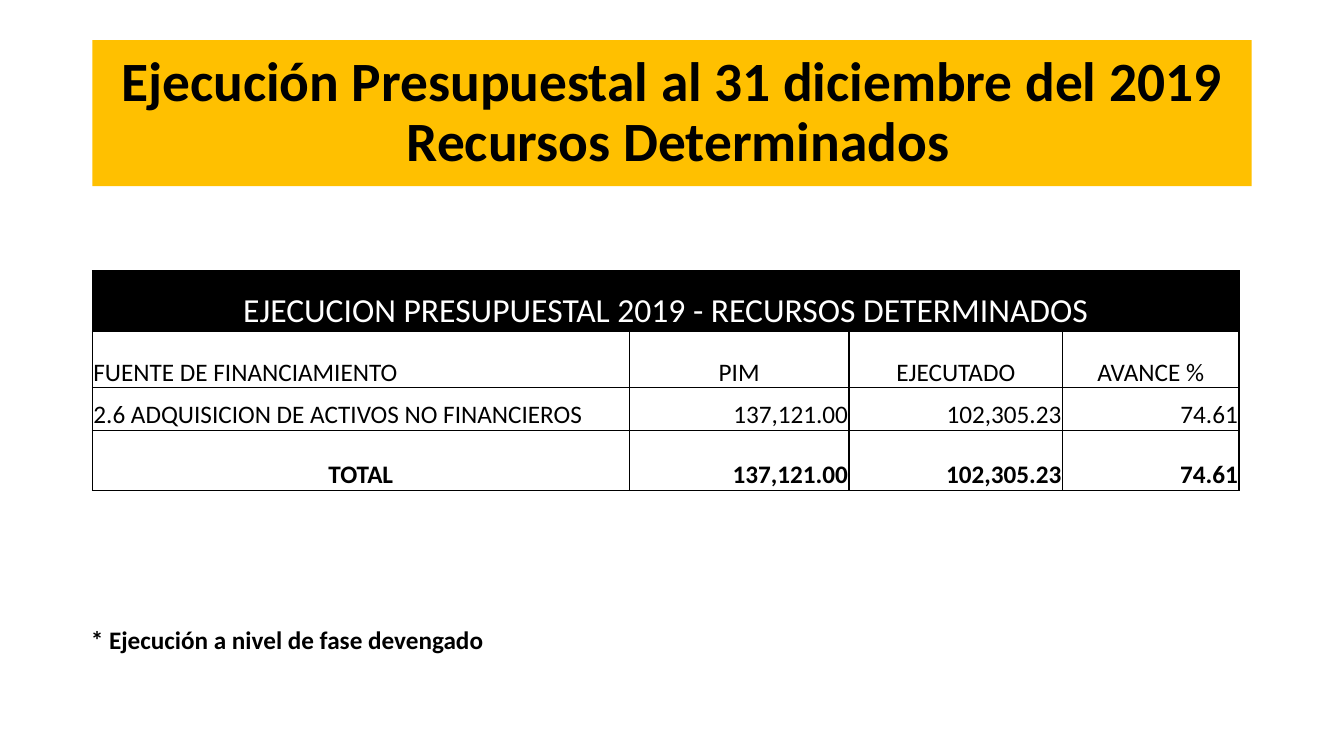
from dataclasses import dataclass

from lxml.etree import SubElement
from pptx import Presentation
from pptx.dml.color import RGBColor as RGB
from pptx.enum.text import MSO_ANCHOR as Anchor, MSO_AUTO_SIZE as AutoSize, PP_ALIGN as Align
from pptx.oxml.ns import qn
from pptx.util import Pt

COLORS = {"black": "000000", "white": "FFFFFF", "amber": "FFC000"}
FONT = "Calibri"
COL_WIDTHS = (383.5, 157, 152.5, 126)
L, C, R = Align.LEFT, Align.CENTER, Align.RIGHT


@dataclass
class Row:
    height: float
    texts: tuple[str, ...]
    aligns: tuple[Align, ...]
    size: float = 18
    bold: bool = False
    color: str = "black"
    fill: str | None = None


ROWS = (
    Row(43.5, ("EJECUCION PRESUPUESTAL 2019 - RECURSOS DETERMINADOS",), (C,),
        size=24, color="white", fill="black"),
    Row(40, ("FUENTE DE FINANCIAMIENTO", "PIM", "EJECUTADO", "AVANCE %"), (L, C, C, C)),
    Row(30.5, ("2.6 ADQUISICION DE ACTIVOS NO FINANCIEROS", "137,121.00", "102,305.23", "74.61"),
        (L, R, R, R)),
    Row(43, ("TOTAL", "137,121.00", "102,305.23", "74.61"), (C, R, R, R), bold=True),
)


def rgb(name: str) -> RGB:
    return RGB.from_string(COLORS[name])


def style(p, size: float, bold: bool, color: str = "black", align: Align = L) -> None:
    p.alignment = align
    p.font.name, p.font.size, p.font.bold = FONT, Pt(size), bold
    p.font.color.rgb = rgb(color)


def add_borders(cell) -> None:
    tc_pr = cell._tc.get_or_add_tcPr()
    for side in ("lnL", "lnR", "lnT", "lnB"):
        ln = SubElement(tc_pr, qn(f"a:{side}"), w=str(Pt(1)))
        fill = SubElement(ln, qn("a:solidFill"))
        SubElement(fill, qn("a:srgbClr"), val=COLORS["black"])


def format_cell(cell, row: Row) -> None:
    cell.margin_left = cell.margin_right = cell.margin_top = Pt(0.75)
    cell.margin_bottom = Pt(0)
    cell.vertical_anchor = Anchor.BOTTOM
    add_borders(cell)
    if row.fill:
        cell.fill.solid()
        cell.fill.fore_color.rgb = rgb(row.fill)
    else:
        cell.fill.background()


def add_budget_table(slide, left: float, top: float) -> None:
    table = slide.shapes.add_table(
        len(ROWS), len(COL_WIDTHS), Pt(left), Pt(top),
        Pt(sum(COL_WIDTHS)), Pt(sum(row.height for row in ROWS))).table
    table.first_row = table.horz_banding = False
    for col, width in zip(table.columns, COL_WIDTHS):
        col.width = Pt(width)
    table.cell(0, 0).merge(table.cell(0, len(COL_WIDTHS) - 1))
    for i, row in enumerate(ROWS):
        table.rows[i].height = Pt(row.height)
        for cell in table.rows[i].cells:
            format_cell(cell, row)
        for j, (text, align) in enumerate(zip(row.texts, row.aligns)):
            cell = table.cell(i, j)
            cell.text = text
            style(cell.text_frame.paragraphs[0], row.size, row.bold, row.color, align)


def add_title(slide) -> None:
    s = slide.shapes.title
    s.left, s.top, s.width, s.height = Pt(66), Pt(28.6), Pt(828), Pt(104.4)
    s.fill.solid()
    s.fill.fore_color.rgb = rgb("amber")
    tf = s.text_frame
    tf.text = "Ejecución Presupuestal al 31 diciembre del 2019\v Recursos Determinados"
    tf.auto_size, tf.word_wrap = AutoSize.NONE, True
    tf.vertical_anchor = Anchor.MIDDLE
    p = tf.paragraphs[0]
    style(p, 39.6, True, align=C)
    p.line_spacing = 0.9


def add_note(slide) -> None:
    tf = slide.shapes.add_textbox(Pt(57.8), Pt(442.2), Pt(302), Pt(29)).text_frame
    tf.text = "* Ejecución a nivel de fase devengado"
    tf.auto_size, tf.word_wrap = AutoSize.SHAPE_TO_FIT_TEXT, False
    style(tf.paragraphs[0], 18, True)


def main() -> None:
    prs = Presentation()
    prs.slide_width, prs.slide_height = Pt(960), Pt(540)
    slide = prs.slides.add_slide(prs.slide_layouts.get_by_name("Title Only"))
    # Heading band, footnote, then the budget table
    add_title(slide)
    add_note(slide)
    add_budget_table(slide, 66, 193.5)
    prs.save("out.pptx")


if __name__ == "__main__":
    main()
